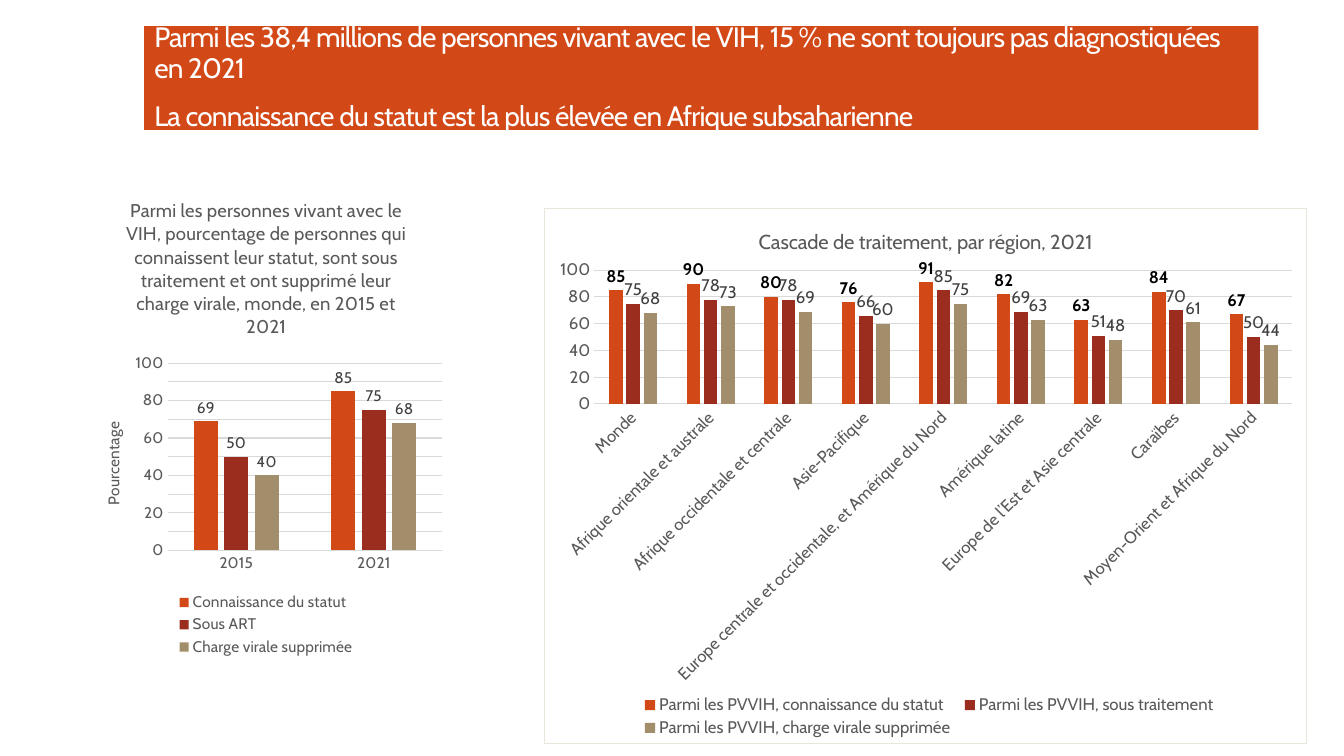
from lxml import etree
from pptx import Presentation
from pptx.chart.data import CategoryChartData
from pptx.dml.color import RGBColor
from pptx.enum import chart as charts, text
from pptx.oxml import parse_xml
from pptx.oxml.ns import nsdecls, qn
from pptx.util import Inches, Pt

ORANGE = RGBColor(0xD3, 0x48, 0x17)
RED = RGBColor(0x9B, 0x2D, 0x1F)
TAN = RGBColor(0xA2, 0x8E, 0x6A)
GRAY = RGBColor(0x59, 0x59, 0x59)
DARK = RGBColor(0x40, 0x40, 0x40)
BLACK = RGBColor(0, 0, 0)
WHITE = RGBColor(0xFF, 0xFF, 0xFF)
GRID = RGBColor(0xD9, 0xD9, 0xD9)
FONT = "Cabin"


def style_font(font, size, color, bold=False):
    font.name = FONT
    font.size = Pt(size)
    font.bold = bold
    font.color.rgb = color


def place(parent, index, box, inner=False):
    for old in parent.findall(qn("c:layout")):
        parent.remove(old)
    layout = etree.Element(qn("c:layout"))
    manual = etree.SubElement(layout, qn("c:manualLayout"))
    settings = [("layoutTarget", "inner")] if inner else []
    settings += [("xMode", "edge"), ("yMode", "edge")]
    settings += zip("xywh", box)
    for name, value in settings:
        etree.SubElement(manual, qn("c:" + name)).set("val", str(value))
    parent.insert(index, layout)


presentation = Presentation()
presentation.slide_width = Inches(13.33)
presentation.slide_height = Inches(7.5)
slide = presentation.slides.add_slide(presentation.slide_layouts[5])

title = slide.shapes.title
title.left, title.top = Inches(1.43), Inches(0.26)
title.width, title.height = Inches(11.05), Inches(1.03)
title.fill.solid()
title.fill.fore_color.rgb = ORANGE
frame = title.text_frame
frame.word_wrap = True
frame.auto_size = text.MSO_AUTO_SIZE.NONE
frame.vertical_anchor = text.MSO_ANCHOR.MIDDLE
messages = [
    "Parmi les 38,4\u00a0millions de personnes vivant avec le VIH, 15\u00a0% ne sont toujours pas diagnostiquées en 2021",
    "La connaissance du statut est la plus élevée en Afrique subsaharienne",
]
for index, message in enumerate(messages):
    paragraph = frame.add_paragraph() if index else frame.paragraphs[0]
    paragraph.alignment = text.PP_ALIGN.LEFT
    paragraph.line_spacing = 0.9
    paragraph.space_before = Pt(13 * index)
    run = paragraph.add_run()
    run.text = message
    style_font(run.font, 20, WHITE)
    run.font._element.set("spc", "-60")

chart_specs = [
    {
        "at": (5.4, 2.06, 7.56, 5.32),
        "size": 12,
        "title": "Cascade de traitement, par région, 2021",
        "categories": [
            "Monde", "Afrique orientale et australe", "Afrique occidentale et centrale",
            "Asie-Pacifique", "Europe centrale et occidentale, et Amérique du Nord",
            "Amérique latine", "Europe de l’Est et Asie centrale", "Caraïbes",
            "Moyen-Orient et Afrique du Nord",
        ],
        "series": {
            "Parmi les PVVIH, connaissance du statut": [85, 90, 80, 76, 91, 82, 63, 84, 67],
            "Parmi les PVVIH, sous traitement": [75, 78, 78, 66, 85, 69, 51, 70, 50],
            "Parmi les PVVIH, charge virale supprimée": [68, 73, 69, 60, 75, 63, 48, 61, 44],
        },
        "unit": 20,
        "rotation": -2700000,
        "axis_title": None,
        "bold_first": True,
        "border": True,
        "plot": (0.065, 0.116, 0.917, 0.25),
        "legend": (0.12, 0.905, 0.77, 0.09),
    },
    {
        "at": (0.81, 1.78, 3.66, 4.79),
        "size": 11,
        "title": "Parmi les personnes vivant avec le VIH, pourcentage de personnes qui connaissent "
                 "leur statut, sont sous traitement et ont supprimé leur charge virale, monde, "
                 "en 2015 et 2021",
        "categories": ["2015", "2021"],
        "series": {
            "Connaissance du statut": [69, 85],
            "Sous ART": [50, 75],
            "Charge virale supprimée": [40, 68],
        },
        "unit": 10,
        "rotation": 0,
        "axis_title": "Pourcentage",
        "bold_first": False,
        "border": False,
        "plot": (0.233, 0.381, 0.745, 0.387),
        "legend": (0.25, 0.85, 0.5, 0.145),
    },
]

for spec in chart_specs:
    size = spec["size"]
    data = CategoryChartData(number_format="0")
    data.categories = spec["categories"]
    for name, values in spec["series"].items():
        data.add_series(name, values)
    left, top, width, height = map(Inches, spec["at"])
    chart = slide.shapes.add_chart(
        charts.XL_CHART_TYPE.COLUMN_CLUSTERED, left, top, width, height, data
    ).chart
    style_font(chart.font, size, BLACK)

    chart.has_title = True
    run = chart.chart_title.text_frame.paragraphs[0].add_run()
    run.text = spec["title"]
    style_font(run.font, size * 1.2, GRAY)
    chart.chart_title.include_in_layout = False

    plot = chart.plots[0]
    plot.gap_width = 219
    plot.overlap = -27
    plot.vary_by_categories = False
    for index, (series, color) in enumerate(zip(plot.series, [ORANGE, RED, TAN])):
        series.format.fill.solid()
        series.format.fill.fore_color.rgb = color
        labels = series.data_labels
        labels.show_value = True
        labels.number_format = "0"
        labels.number_format_is_linked = False
        labels.position = charts.XL_LABEL_POSITION.OUTSIDE_END
        bold = spec["bold_first"] and index == 0
        style_font(labels.font, size, BLACK if bold else DARK, bold)

    for axis in (chart.category_axis, chart.value_axis):
        axis.major_tick_mark = charts.XL_TICK_MARK.NONE
        axis.minor_tick_mark = charts.XL_TICK_MARK.NONE
        style_font(axis.tick_labels.font, size, GRAY)
    category_line = chart.category_axis.format.line
    category_line.color.rgb = GRID
    category_line.width = Pt(0.75)
    category_text = chart.category_axis._element.find(qn("c:txPr"))
    category_text.find(qn("a:bodyPr")).set("rot", str(spec["rotation"]))

    value_axis = chart.value_axis
    value_axis.minimum_scale = 0
    value_axis.maximum_scale = 100
    value_axis.major_unit = spec["unit"]
    value_axis.format.line.fill.background()
    value_axis.tick_labels.number_format = "0"
    value_axis.tick_labels.number_format_is_linked = False
    grid_line = value_axis.major_gridlines.format.line
    grid_line.color.rgb = GRID
    grid_line.width = Pt(0.75)
    if spec["axis_title"]:
        run = value_axis.axis_title.text_frame.paragraphs[0].add_run()
        run.text = spec["axis_title"]
        style_font(run.font, size, GRAY)

    chart.has_legend = True
    chart.legend.position = charts.XL_LEGEND_POSITION.BOTTOM
    chart.legend.include_in_layout = False
    style_font(chart.legend.font, size, GRAY)

    chart_space = chart._chartSpace
    place(chart_space.find(".//" + qn("c:plotArea")), 0, spec["plot"], inner=True)
    place(chart.legend._element, 1, spec["legend"])
    border = "<a:noFill/>"
    if spec["border"]:
        border = '<a:solidFill><a:srgbClr val="E9E5DC"/></a:solidFill>'
    chart_space.find(qn("c:chart")).addnext(parse_xml(
        f'<c:spPr {nsdecls("c", "a")}><a:noFill/><a:ln w="9525">{border}</a:ln></c:spPr>'
    ))

presentation.save("out.pptx")
